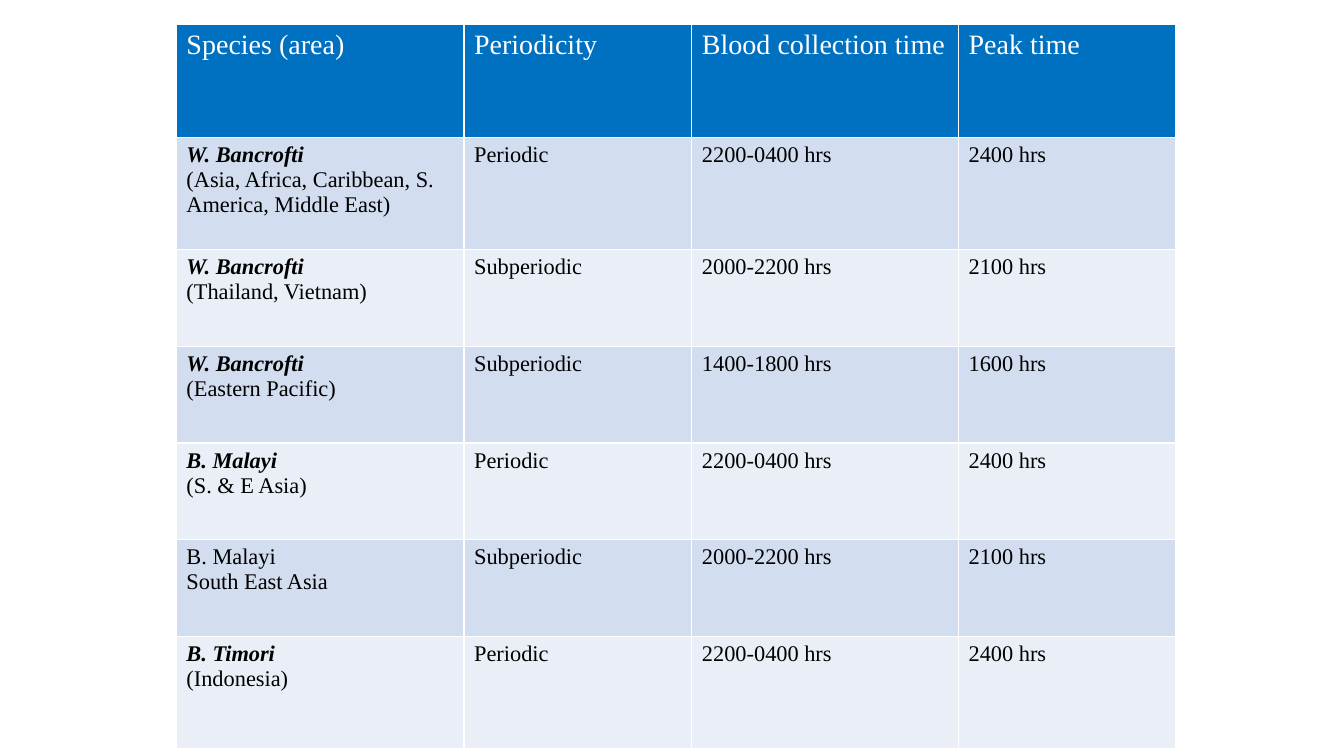
from pptx import Presentation
from pptx.dml.color import RGBColor
from pptx.util import Pt

HEADINGS = ["Species (area)", "Periodicity", "Blood collection time", "Peak time"]
# species, area, species emphasised, periodicity, collection time, peak time
STRAINS = [
    ("W. Bancrofti", "(Asia, Africa, Caribbean, S. America, Middle East)", True,
     "Periodic", "2200-0400 hrs", "2400 hrs"),
    ("W. Bancrofti", "(Thailand, Vietnam)", True,
     "Subperiodic", "2000-2200 hrs", "2100 hrs"),
    ("W. Bancrofti", "(Eastern Pacific)", True,
     "Subperiodic", "1400-1800 hrs", "1600 hrs"),
    ("B. Malayi", "(S. & E Asia)", True,
     "Periodic", "2200-0400 hrs", "2400 hrs"),
    ("B. Malayi", "South East Asia", False,
     "Subperiodic", "2000-2200 hrs", "2100 hrs"),
    ("B. Timori", "(Indonesia)", True,
     "Periodic", "2200-0400 hrs", "2400 hrs"),
]

FONT = "Times New Roman"
HEADER_FILL = "0070C0"
BAND_FILLS = ["D2DEEF", "EAEFF7"]
SLIDE_SIZE = (1280, 720)
TABLE_LEFT, TABLE_TOP = 168, 23
COLUMN_WIDTHS = [274, 217, 254, 207]
ROW_HEIGHTS = [108, 107, 92, 92, 92, 92, 107]


def px(length):
    return length * 9525


def color(hex_string):
    return RGBColor.from_string(hex_string)


def fill_cell(cell, lines, fill, size, ink, emphasised=False):
    """Write one paragraph per line; emphasis applies to the first line only."""
    cell.fill.solid()
    cell.fill.fore_color.rgb = color(fill)
    cell.text_frame.text = "\n".join(lines)
    for number, paragraph in enumerate(cell.text_frame.paragraphs):
        font = paragraph.runs[0].font
        font.name = FONT
        font.size = Pt(size)
        font.color.rgb = color(ink)
        font.bold = font.italic = emphasised and number == 0


def main():
    prs = Presentation()
    prs.slide_width, prs.slide_height = map(px, SLIDE_SIZE)
    slide = prs.slides.add_slide(prs.slide_layouts[6])

    table = slide.shapes.add_table(
        len(ROW_HEIGHTS), len(COLUMN_WIDTHS), px(TABLE_LEFT), px(TABLE_TOP),
        px(sum(COLUMN_WIDTHS)), px(sum(ROW_HEIGHTS))).table
    for column, width in zip(table.columns, COLUMN_WIDTHS):
        column.width = px(width)
    for row, height in zip(table.rows, ROW_HEIGHTS):
        row.height = px(height)

    for col, heading in enumerate(HEADINGS):
        fill_cell(table.cell(0, col), [heading], HEADER_FILL, 20, "FFFFFF")
    for index, (species, area, emphasised, *timings) in enumerate(STRAINS):
        band = BAND_FILLS[index % 2]
        fill_cell(table.cell(index + 1, 0), [species, area], band, 16, "000000",
                  emphasised)
        for col, timing in enumerate(timings, start=1):
            fill_cell(table.cell(index + 1, col), [timing], band, 16, "000000")

    prs.save("out.pptx")


if __name__ == "__main__":
    main()
